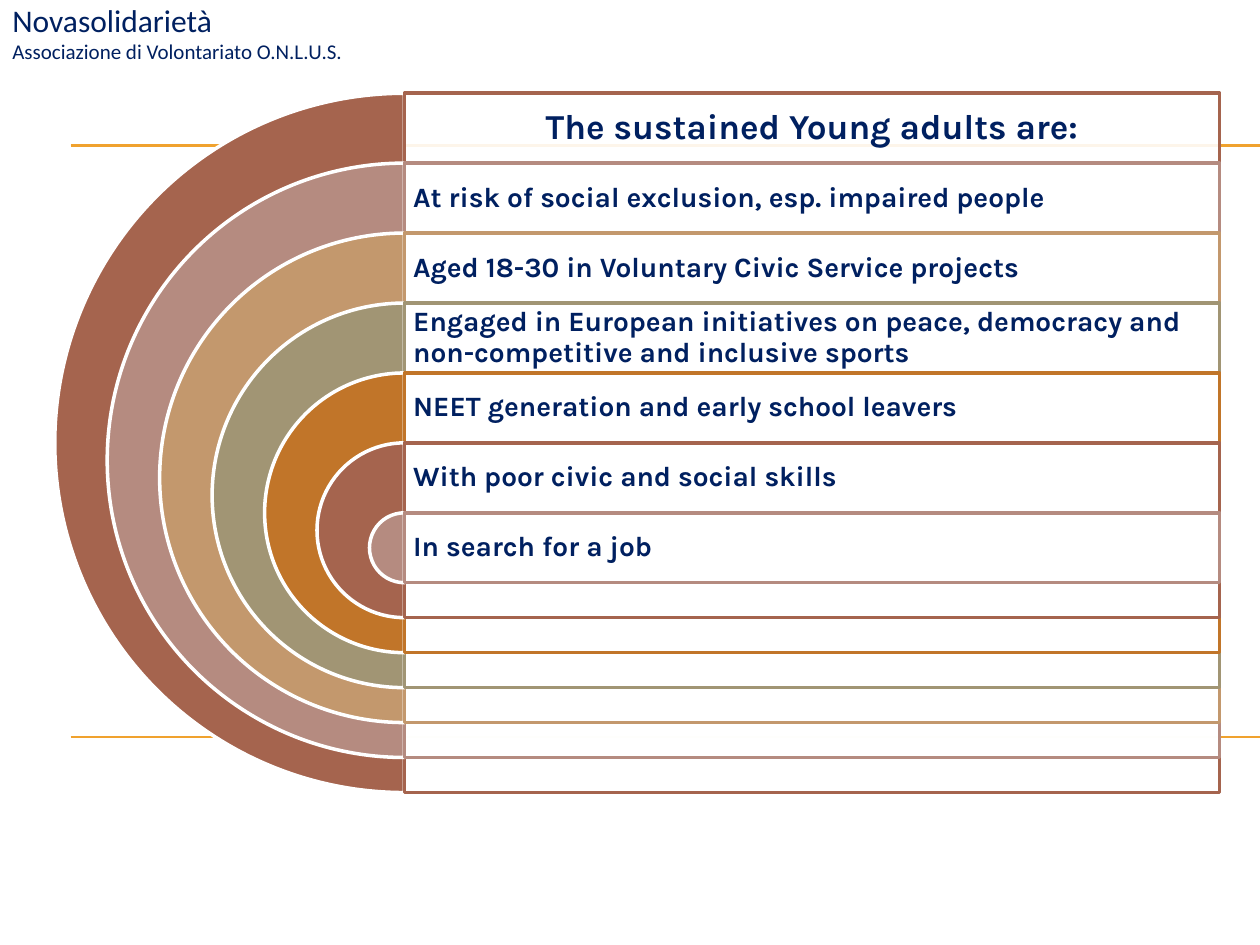
import pptx
import pptx.dml.color
import pptx.enum.shapes
import pptx.enum.text
import pptx.oxml.ns
import pptx.util
from lxml import etree

Inches, Pt = pptx.util.Inches, pptx.util.Pt
Shape = pptx.enum.shapes.MSO_SHAPE
Align = pptx.enum.text.PP_ALIGN
Anchor = pptx.enum.text.MSO_ANCHOR

# Content: text and colour of each ring, from the outside in
NAVY, WHITE, GOLD = "002060", "FFFFFF", "F0A22E"
HEADER = [("Novasolidarietà", 18), ("Associazione di Volontariato O.N.L.U.S.", 12)]
RINGS = [
    ("The sustained Young adults are:", "A5644E"),
    ("At risk of social exclusion, esp. impaired people", "B58B80"),
    ("Aged 18-30 in Voluntary Civic Service projects", "C3986D"),
    ("Engaged in European initiatives on peace, democracy and "
     "non-competitive and inclusive sports", "A19574"),
    ("NEET generation and early school leavers", "C17529"),
    ("With poor civic and social skills", "A5644E"),
    ("In search for a job", "B58B80"),
]
RULES = [1.15, 1.16, 5.85]

# Layout
CENTER, TOP, DIAMETER, PANEL_WIDTH = 3.21, 0.74, 5.55, 6.47
ROW = DIAMETER / 10
SHRINK = 1.5 * ROW


def color(value):
    return pptx.dml.color.RGBColor.from_string(value)


def apply(target, values):
    for name, value in values.items():
        setattr(target, name, value)


def add_rule(page, y):
    rule = page.shapes.add_connector(
        pptx.enum.shapes.MSO_CONNECTOR.STRAIGHT,
        Inches(0.56), Inches(y), Inches(10), Inches(y))
    rule.line.color.rgb = color(GOLD)
    rule.line.width = Pt(0.75)
    etree.SubElement(rule._element.spPr, pptx.oxml.ns.qn("a:effectLst"))


def add_shape(group, kind, left, top, width, height, fill, line):
    shape = group.shapes.add_shape(
        kind, Inches(left), Inches(top), Inches(width), Inches(height))
    shape.shadow.inherit = False
    shape.fill.solid()
    shape.fill.fore_color.rgb = color(fill)
    shape.line.color.rgb = color(line)
    shape.line.width = Pt(2)
    return shape


def set_alpha(shape, percent):
    solid = shape._element.spPr.find(pptx.oxml.ns.qn("a:solidFill"))
    etree.SubElement(solid[0], pptx.oxml.ns.qn("a:alpha"), val=str(percent * 1000))


def add_text(para, text, size, font, bold=False):
    span = para.add_run()
    span.text = text
    apply(span.font, {"size": Pt(size), "name": font, "bold": bold})
    span.font.color.rgb = color(NAVY)


def add_ring(group, index, text, ring_color):
    top = TOP + index * ROW
    size = DIAMETER - index * SHRINK
    # Left half of a disc
    half = add_shape(group, Shape.PIE, CENTER - size / 2, top, size, size,
                     ring_color, WHITE)
    half.adjustments[0], half.adjustments[1] = 54, 162
    # Panel to its right
    panel = add_shape(group, Shape.RECTANGLE, CENTER, top, PANEL_WIDTH, size,
                      WHITE, ring_color)
    set_alpha(panel, 90)
    # Label in the top row of the panel
    box = group.shapes.add_textbox(
        Inches(CENTER), Inches(top), Inches(PANEL_WIDTH), Inches(ROW))
    is_title = index == 0
    inset = Inches(0.08 if is_title else 0.07)
    apply(box.text_frame, {
        "word_wrap": True, "vertical_anchor": Anchor.MIDDLE,
        "margin_left": inset, "margin_right": inset,
        "margin_top": inset, "margin_bottom": inset})
    para = box.text_frame.paragraphs[0]
    apply(para, {"alignment": Align.CENTER if is_title else Align.LEFT,
                 "line_spacing": 0.9})
    add_text(para, text, 20 if is_title else 16, "Karla", True)


def add_header(page):
    box = page.shapes.add_textbox(Inches(0), Inches(-0.05), Inches(2.95), Inches(0.61))
    frame = box.text_frame
    apply(frame, {"word_wrap": False, "vertical_anchor": Anchor.MIDDLE,
                  "auto_size": pptx.enum.text.MSO_AUTO_SIZE.SHAPE_TO_FIT_TEXT})
    for index, (text, size) in enumerate(HEADER):
        para = frame.add_paragraph() if index else frame.paragraphs[0]
        para.alignment = Align.LEFT
        add_text(para, text, size, "Calibri")


def main():
    deck = pptx.Presentation()
    apply(deck, {"slide_width": Inches(10), "slide_height": Inches(7.5)})
    page = deck.slides.add_slide(deck.slide_layouts[6])
    for y in RULES:
        add_rule(page, y)
    group = page.shapes.add_group_shape()
    for index, (text, ring_color) in enumerate(RINGS):
        add_ring(group, index, text, ring_color)
    add_header(page)
    deck.save("out.pptx")


if __name__ == "__main__":
    main()
